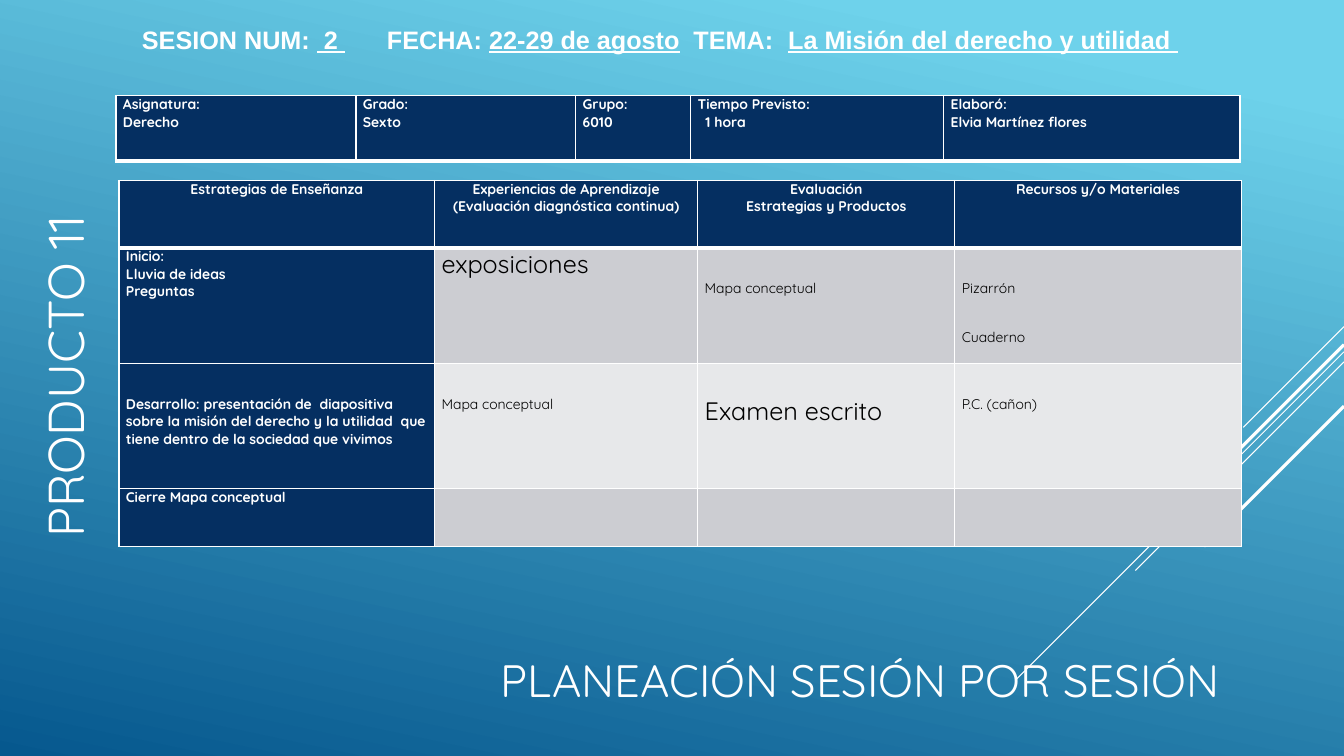
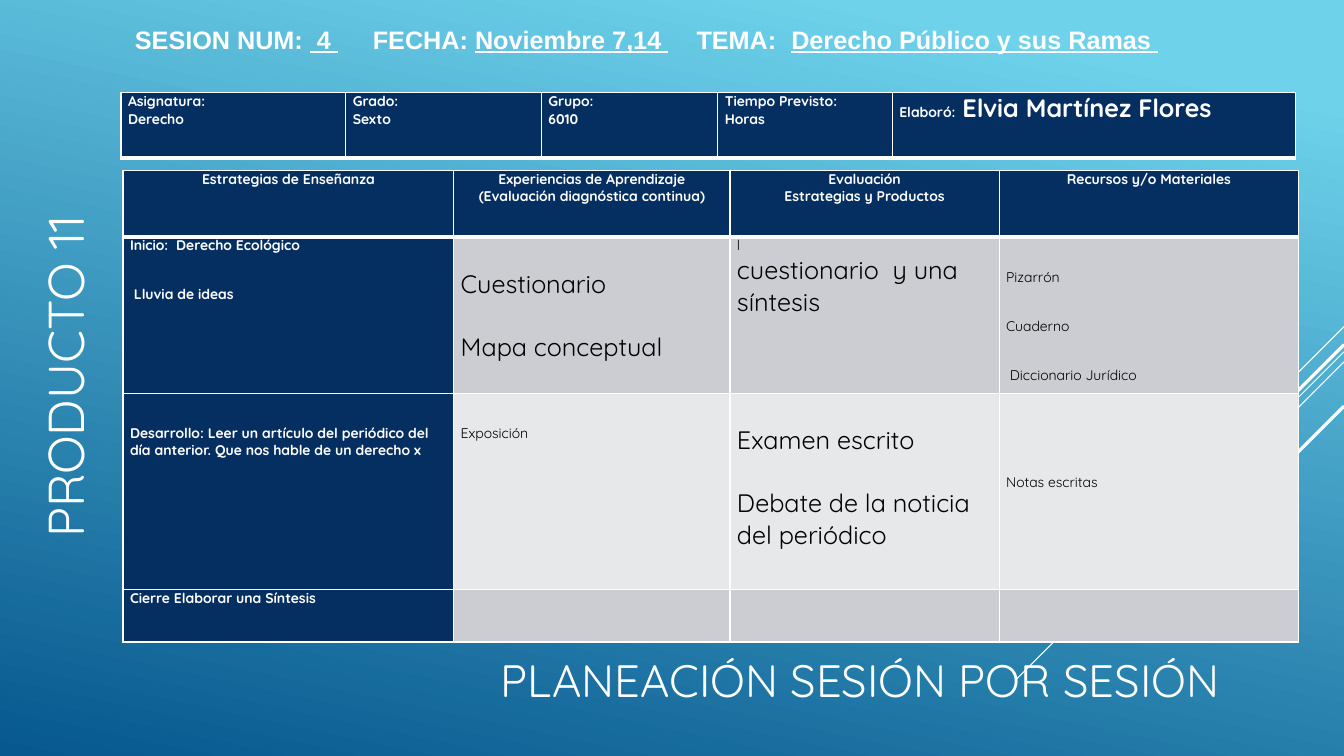
import lxml.etree
import pptx
import pptx.dml.color
import pptx.enum.shapes
import pptx.enum.text
import pptx.oxml.ns
import pptx.util

Inches = pptx.util.Inches
Pt = pptx.util.Pt
RGBColor = pptx.dml.color.RGBColor
qn = pptx.oxml.ns.qn

WHITE = RGBColor(0xFF, 0xFF, 0xFF)
BLACK = RGBColor(0x00, 0x00, 0x00)
NAVY = RGBColor(0x05, 0x2F, 0x61)
BANDS = (RGBColor(0xCC, 0xCD, 0xD2), RGBColor(0xE7, 0xE8, 0xEA))
GRADIENT = ((0.1, RGBColor(0x6E, 0xD2, 0xEB)), (1, RGBColor(0x06, 0x58, 0x8E)))

SLIDE_WIDTH, SLIDE_HEIGHT = 13.33, 7.5
SMALL, LARGE = 10, 18
BLANK_LINE = Pt(22.5)
THIN, THICK = 1, 3

# Start height at the right edge, horizontal and vertical run, line width
DIAGONALS = [
    (3.24, 1.00, 0.75),
    (3.49, 3.26, 0.75),
    (3.59, 2.07, 0.75),
    (3.42, 1.91, 2.25),
    (4.03, 1.39, 2.25),
]

SIDE_TITLE = {"text": "PRODUCTO 11", "box": (-1.61, 2.75, 4.49, 0.88),
              "size": 36, "rotation": 270}
BOTTOM_TITLE = {"text": "PLANEACIÓN SESIÓN POR SESIÓN",
                "box": (4.87, 6.42, 8.38, 0.61), "size": 32.4, "rotation": 0}


def line(text, size=SMALL, gap=0, tail=None):
    """Describe a paragraph: gap counts the blank lines above, tail is large text."""
    runs = [(text, size)] + ([(tail, LARGE)] if tail else [])
    return {"runs": runs, "gap": gap}


PLAN_HEADINGS = [
    [line("Estrategias de Enseñanza")],
    [line("Experiencias de Aprendizaje"),
     line("(Evaluación diagnóstica continua)")],
    [line("Evaluación"), line("Estrategias y Productos")],
    [line("Recursos y/o Materiales")],
]

SESSIONS = [
    {
        "heading": ["SESION NUM: ", " 2 ", "\tFECHA: ", "22-29 de agosto",
                    "\tTEMA:\t", "La Misión del derecho y utilidad "],
        "heading_left": 1.31,
        "tabs": (2.43, 5.47, 6.41),
        "data": {
            "place": (1.15, 0.95),
            "columns": (2.38, 2.18, 1.14, 2.51, 2.94),
            "rows": (0.65,),
            "cells": [[
                [line("Asignatura:"), line("Derecho")],
                [line("Grado:"), line("Sexto")],
                [line("Grupo:"), line("6010")],
                [line("Tiempo Previsto:"), line("  1 hora")],
                [line("Elaboró:"), line("Elvia Martínez flores")],
            ]],
        },
        "plan": {
            "place": (1.18, 1.79),
            "columns": (3.13, 2.61, 2.55, 2.84),
            "rows": (0.67, 1.15, 1.24, 0.57),
            "cells": [
                PLAN_HEADINGS,
                [
                    [line("Inicio:"), line("Lluvia de ideas"), line("Preguntas")],
                    [line("exposiciones", LARGE)],
                    [line("Mapa conceptual", gap=1)],
                    [line("Pizarrón", gap=1), line("Cuaderno", gap=1)],
                ],
                [
                    [line("Desarrollo: presentación de  diapositiva  sobre la "
                          "misión del derecho y la utilidad  que tiene dentro "
                          "de la sociedad que vivimos", gap=1)],
                    [line("Mapa conceptual", gap=1)],
                    [line("Examen escrito", LARGE, gap=1)],
                    [line("P.C. (cañon)", gap=1)],
                ],
                [[line("Cierre Mapa conceptual")], [], [], []],
            ],
        },
    },
    {
        "heading": ["SESION NUM: ", " 4 ", "\tFECHA: ", "Noviembre 7,14 ",
                    "\tTEMA:\t", "Derecho Público y sus Ramas "],
        "heading_left": 1.24,
        "tabs": (2.36, 5.57, 6.51),
        "data": {
            "place": (1.2, 0.92),
            "columns": (2.23, 1.94, 1.75, 1.73, 4),
            "rows": (0.65,),
            "cells": [[
                [line("Asignatura:"), line("Derecho")],
                [line("Grado:"), line("Sexto")],
                [line("Grupo:"), line("6010")],
                [line("Tiempo Previsto:"), line("Horas")],
                [line("Elaboró:", tail=" Elvia Martínez Flores")],
            ]],
        },
        "plan": {
            "place": (1.22, 1.69),
            "columns": (3.28, 2.74, 2.67, 2.97),
            "rows": (0.66, 1.55, 1.95, 0.52),
            "cells": [
                PLAN_HEADINGS,
                [
                    [line("Inicio:  Derecho Ecológico"),
                     line(" Lluvia de ideas", gap=1)],
                    [line("Cuestionario", LARGE, gap=1),
                     line("Mapa conceptual", LARGE, gap=1)],
                    [line("l"), line("cuestionario  y una síntesis", LARGE)],
                    [line("Pizarrón", gap=1), line("Cuaderno", gap=1),
                     line(" Diccionario Jurídico", gap=1)],
                ],
                [
                    [line("Desarrollo: Leer un artículo del periódico del día "
                          "anterior. Que nos hable de un derecho x", gap=1)],
                    [line("Exposición", gap=1)],
                    [line("Examen escrito", LARGE, gap=1),
                     line("Debate de la noticia del periódico", LARGE, gap=1)],
                    [line("Notas escritas", gap=2.55)],
                ],
                [[line("Cierre Elaborar una Síntesis")], [], [], []],
            ],
        },
    },
]


def add_run(paragraph, text, size, color=WHITE, **font_values):
    run = paragraph.add_run()
    run.text = text
    run.font.color.rgb = color
    values = {"name": "Quicksand", "size": Pt(size), **font_values}
    for name, value in values.items():
        setattr(run.font, name, value)


def add_text_box(slide, box, **frame_values):
    shape = slide.shapes.add_textbox(*map(Inches, box))
    for name, value in {"word_wrap": True, **frame_values}.items():
        setattr(shape.text_frame, name, value)
    return shape


def add_title(slide, title, anchor):
    shape = add_text_box(slide, title["box"], vertical_anchor=anchor)
    shape.rotation = title["rotation"]
    add_run(shape.text_frame.paragraphs[0], title["text"], title["size"])


def add_diagonals(slide):
    group = slide.shapes.add_group_shape()
    for top, run, width in DIAGONALS:
        connector = group.shapes.add_connector(
            pptx.enum.shapes.MSO_CONNECTOR.STRAIGHT,
            Inches(SLIDE_WIDTH), Inches(top),
            Inches(SLIDE_WIDTH - run), Inches(top + run))
        connector.line.color.rgb = WHITE
        connector.line.width = Pt(width)
        lxml.etree.SubElement(connector._element.spPr, qn("a:effectLst"))


def add_heading(slide, session):
    """Write the session line, with every second part underlined."""
    shape = add_text_box(slide, (session["heading_left"], 0.19, 11.5, 0.39))
    paragraph = shape.text_frame.paragraphs[0]
    properties = paragraph._p.get_or_add_pPr()
    tab_list = lxml.etree.SubElement(properties, qn("a:tabLst"))
    for position in session["tabs"]:
        lxml.etree.SubElement(tab_list, qn("a:tab"),
                              pos=str(Inches(position)), algn="l")
    for index, text in enumerate(session["heading"]):
        add_run(paragraph, text, LARGE, name="Arial", bold=True,
                underline=index % 2 == 1)


def set_borders(cell, top, bottom):
    properties = cell._tc.get_or_add_tcPr()
    widths = {"a:lnL": THIN, "a:lnR": THIN, "a:lnT": top, "a:lnB": bottom}
    for index, (tag, width) in enumerate(widths.items()):
        border = lxml.etree.Element(qn(tag), w=str(Pt(width)))
        fill = lxml.etree.SubElement(border, qn("a:solidFill"))
        lxml.etree.SubElement(fill, qn("a:srgbClr"), val=str(WHITE))
        properties.insert(index, border)


def fill_cell(cell, lines, is_navy, alignment):
    values = {"margin_left": Inches(0.07), "margin_right": Inches(0.07),
              "margin_top": 0, "margin_bottom": 0}
    if lines:
        values["margin_top"] = int(BLANK_LINE * lines[0]["gap"])
    for name, value in values.items():
        setattr(cell, name, value)
    for index, content in enumerate(lines):
        frame = cell.text_frame
        paragraph = frame.add_paragraph() if index else frame.paragraphs[0]
        paragraph.alignment = alignment
        if index and content["gap"]:
            paragraph.space_before = int(BLANK_LINE * content["gap"])
        for text, size in content["runs"]:
            add_run(paragraph, text, size, WHITE if is_navy else BLACK,
                    bold=is_navy)


def add_table(slide, content, heading_alignment):
    columns, rows = content["columns"], content["rows"]
    table = slide.shapes.add_table(
        len(rows), len(columns), *map(Inches, content["place"]),
        Inches(sum(columns)), Inches(sum(rows))).table
    table.first_row = table.horz_banding = False
    for column, width in zip(table.columns, columns):
        column.width = Inches(width)
    for row_index, lines_by_cell in enumerate(content["cells"]):
        table.rows[row_index].height = Inches(rows[row_index])
        is_heading = row_index == 0
        for column_index, lines in enumerate(lines_by_cell):
            cell = table.cell(row_index, column_index)
            is_navy = is_heading or column_index == 0
            cell.fill.solid()
            cell.fill.fore_color.rgb = NAVY if is_navy else BANDS[(row_index - 1) % 2]
            set_borders(cell, THICK if row_index == 1 else THIN,
                        THICK if is_heading else THIN)
            fill_cell(cell, lines, is_navy,
                      heading_alignment if is_heading else pptx.enum.text.PP_ALIGN.LEFT)


def set_background(master):
    fill = master.background.fill
    fill.gradient()
    fill.gradient_angle = 258
    for stop, (position, color) in zip(fill.gradient_stops, GRADIENT):
        stop.position = position
        stop.color.rgb = color


def main():
    presentation = pptx.Presentation()
    presentation.slide_width = Inches(SLIDE_WIDTH)
    presentation.slide_height = Inches(SLIDE_HEIGHT)
    set_background(presentation.slide_master)
    for session in SESSIONS:
        slide = presentation.slides.add_slide(presentation.slide_layouts[6])
        add_diagonals(slide)
        add_title(slide, SIDE_TITLE, pptx.enum.text.MSO_ANCHOR.MIDDLE)
        add_title(slide, BOTTOM_TITLE, pptx.enum.text.MSO_ANCHOR.TOP)
        add_table(slide, session["data"], pptx.enum.text.PP_ALIGN.LEFT)
        add_table(slide, session["plan"], pptx.enum.text.PP_ALIGN.CENTER)
        add_heading(slide, session)
    presentation.save("out.pptx")


if __name__ == "__main__":
    main()
